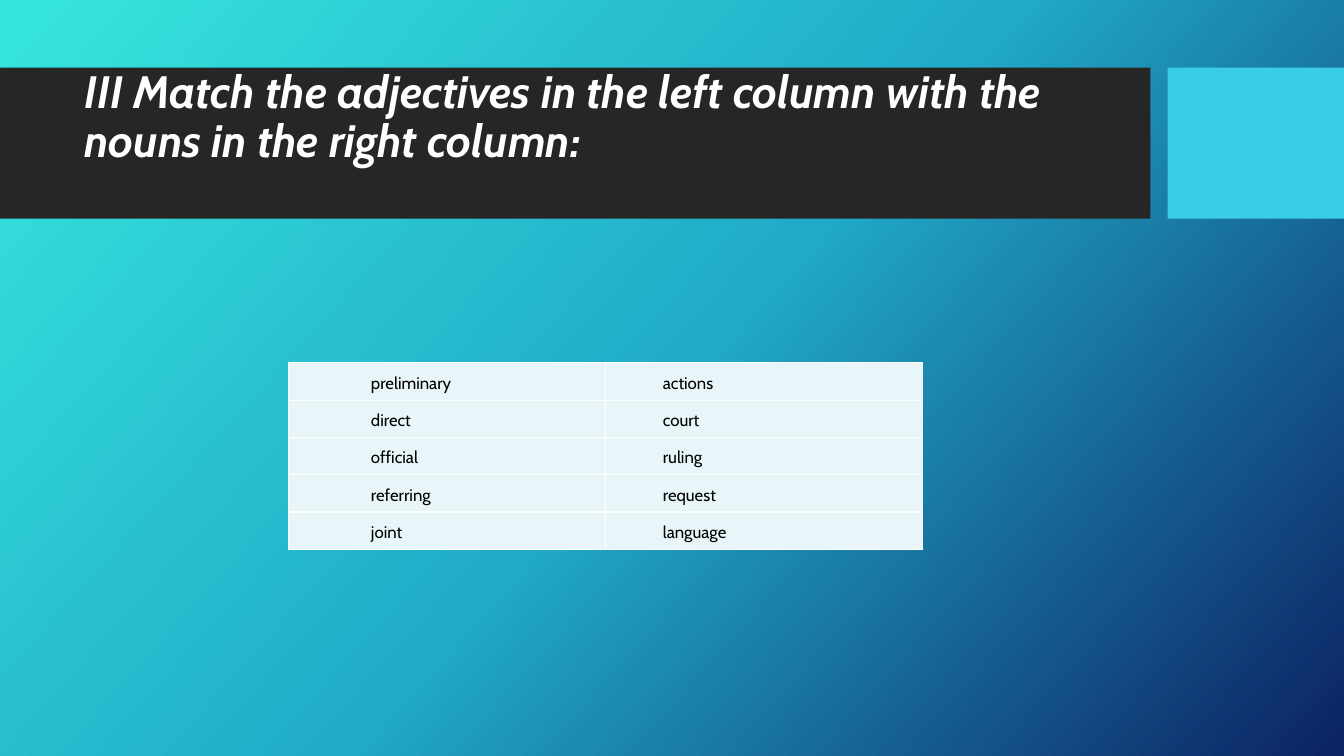
"""Build a slide with a matching exercise for adjectives and nouns."""
from copy import deepcopy
from dataclasses import dataclass

from lxml.etree import SubElement as Sub
from pptx import Presentation
from pptx.dml.color import RGBColor as Rgb
from pptx.enum.shapes import MSO_SHAPE as Kind
from pptx.enum.text import MSO_ANCHOR as Anchor
from pptx.oxml.ns import qn
from pptx.util import Inches, Pt


@dataclass(frozen=True)
class Theme:
    font: str = "Cabin"
    title: float = 32.4
    body: float = 12
    white: str = "FFFFFF"
    black: str = "000000"
    bar: str = "262626"
    block: str = "39CDE7"
    cell: str = "E8F6FA"
    grade: tuple = ("36E6DD", "21ABC8", "0C2263")


LOOK = Theme()
TITLE = "III Match the adjectives in the left column with the nouns in the right column:"
PAIRS = (
    ("preliminary", "actions"),
    ("direct", "court"),
    ("official", "ruling"),
    ("referring", "request"),
    ("joint", "language"),
)


def paint(fill, color):
    fill.solid()
    fill.fore_color.rgb = Rgb.from_string(color)


def shade(slide):
    fill = slide.background.fill
    fill.gradient()
    fill.gradient_angle = 360 - 42
    stops = slide.element.find(".//" + qn("a:gsLst"))
    stops.append(deepcopy(stops[-1]))
    for i, (stop, color) in enumerate(zip(fill.gradient_stops, LOOK.grade)):
        stop.position = i / 2
        stop.color.rgb = Rgb.from_string(color)


def block(slide, left, width, color):
    shape = slide.shapes.add_shape(
        Kind.RECTANGLE, Inches(left), Inches(0.67), Inches(width), Inches(1.5))
    shape.shadow.inherit = False
    paint(shape.fill, color)
    shape.line.fill.background()


def write(frame, text, size, color, space=1.0, after=0, left=0, first=0,
          bold=False, italic=False):
    para = frame.paragraphs[0]
    props = para._p.get_or_add_pPr()
    props.set("marL", str(Inches(left)))
    props.set("indent", str(Inches(first)))
    para.line_spacing = space
    para.space_after = Pt(after)
    run = para.add_run()
    run.text = text
    font = run.font
    font.name, font.size = LOOK.font, Pt(size)
    font.bold, font.italic = bold, italic
    font.color.rgb = Rgb.from_string(color)


def head(slide):
    box = slide.shapes.add_textbox(
        Inches(0.74), Inches(0.82), Inches(10.51), Inches(1.18))
    frame = box.text_frame
    frame.word_wrap = True
    frame.vertical_anchor = Anchor.MIDDLE
    frame.margin_bottom = Inches(0.53)
    write(frame, TITLE, LOOK.title, LOOK.white, space=0.9, bold=True, italic=True)


def edge(cell):
    props = cell._tc.get_or_add_tcPr()
    for side in ("L", "R", "T", "B"):
        line = Sub(props, qn("a:ln" + side), w=str(Pt(1)))
        Sub(Sub(line, qn("a:solidFill")), qn("a:srgbClr"), val=LOOK.white)


def grid(slide):
    table = slide.shapes.add_table(
        len(PAIRS), 2, Inches(2.86), Inches(3.6), Inches(6.29), Inches(1.85)).table
    table.first_row = table.horz_banding = False
    for r, pair in enumerate(PAIRS):
        for c, word in enumerate(pair):
            cell = table.cell(r, c)
            cell.margin_left = cell.margin_right = Inches(0.07)
            cell.margin_top = cell.margin_bottom = Inches(0.07)
            edge(cell)
            paint(cell.fill, LOOK.cell)
            write(cell.text_frame, word, LOOK.body, LOOK.black, space=1.15,
                  after=8 * c, left=1 - 0.25 * c, first=-0.25)


def main():
    deck = Presentation()
    deck.slide_width, deck.slide_height = Inches(13.33), Inches(7.5)
    slide = deck.slides.add_slide(deck.slide_layouts[6])
    shade(slide)
    block(slide, 0, 11.41, LOOK.bar)
    block(slide, 11.58, 1.75, LOOK.block)
    head(slide)
    grid(slide)
    deck.save("out.pptx")


if __name__ == "__main__":
    main()
